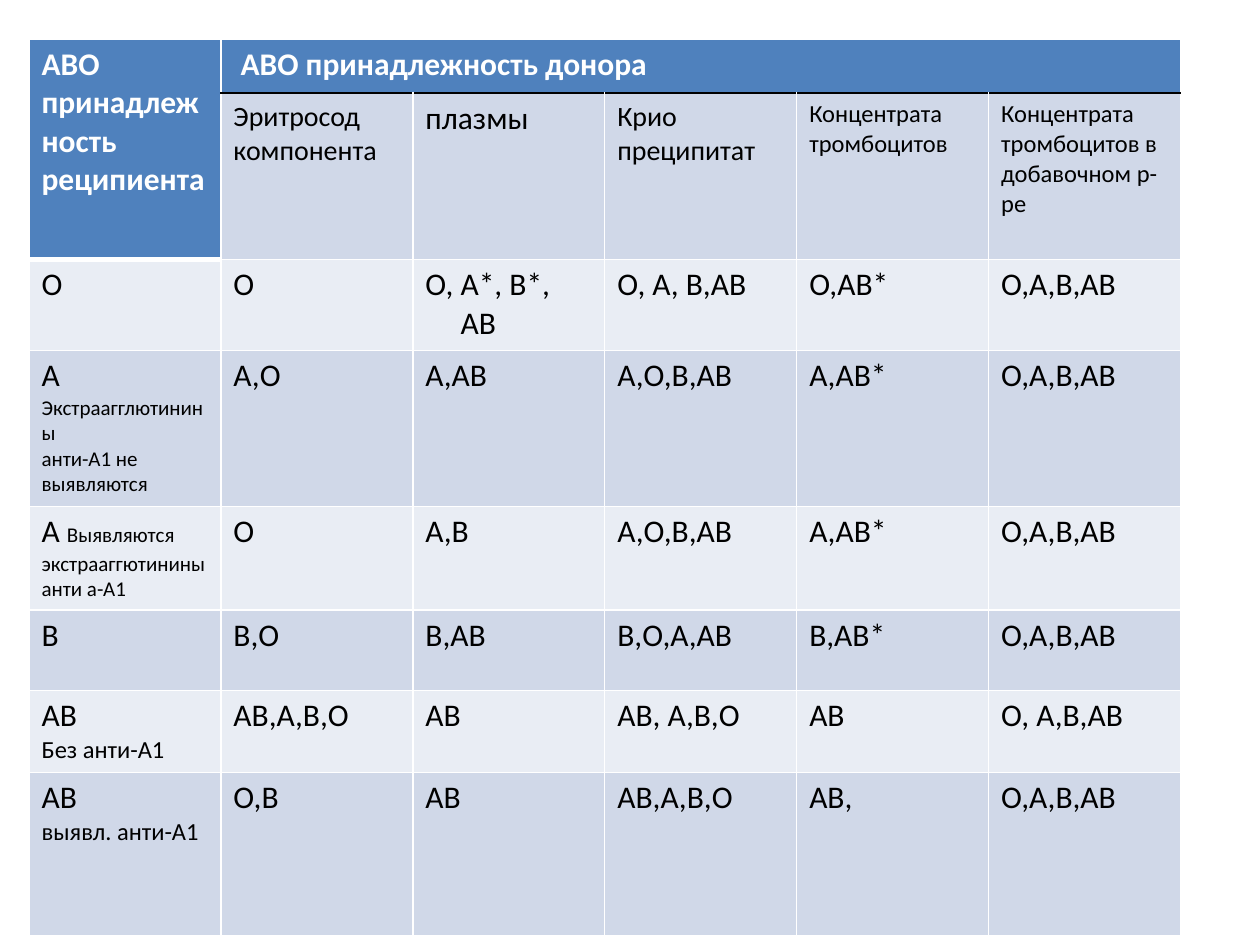
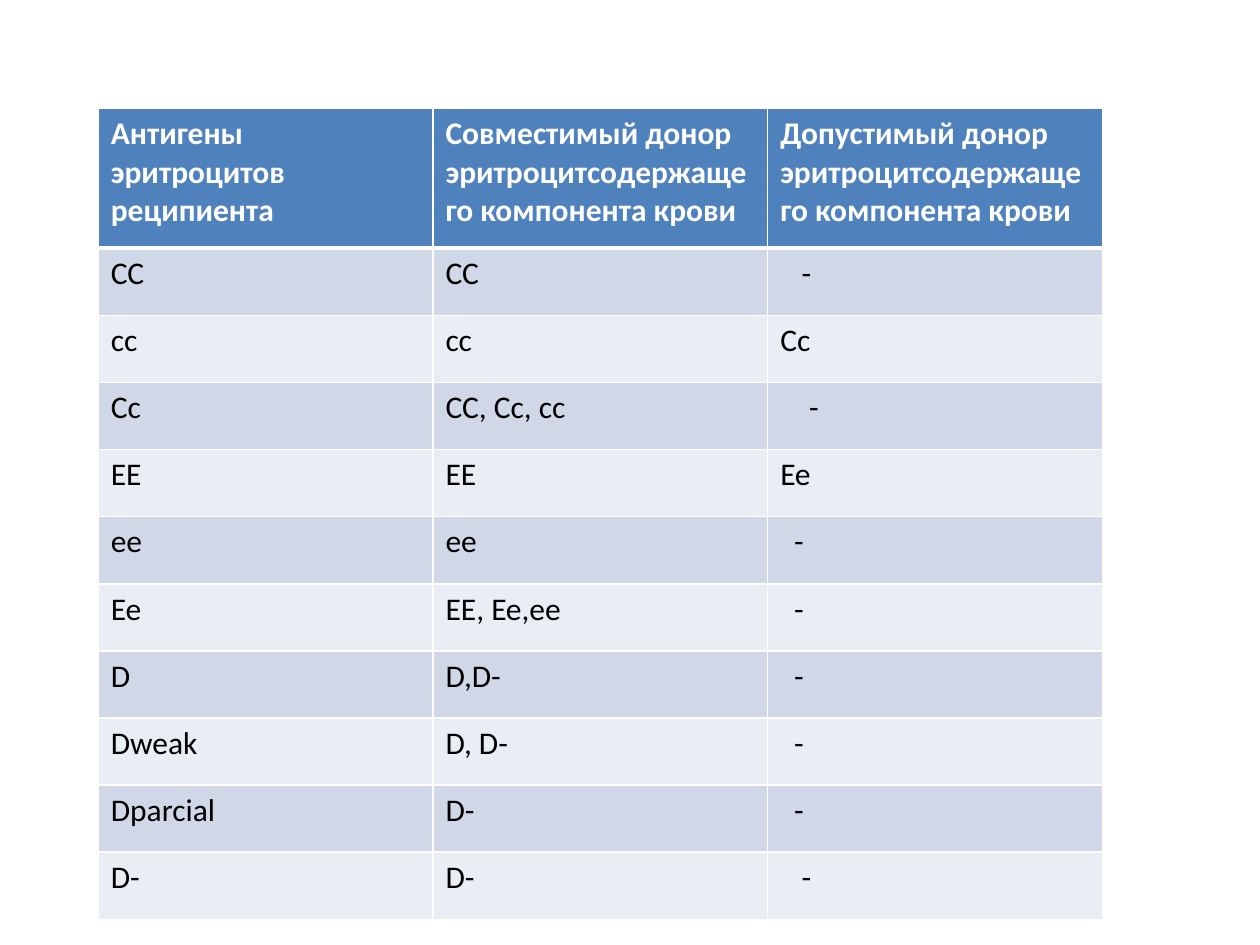
import pptx
import pptx.dml.color
import pptx.oxml
import pptx.oxml.ns
import pptx.util
from dataclasses import dataclass
from typing import NamedTuple, Union


@dataclass(frozen=True)
class Theme:
    font: str = "Calibri"
    header: str = "4F81BD"
    band_dark: str = "D0D8E8"
    band_light: str = "E9EDF4"
    text: str = "000000"
    inverse: str = "FFFFFF"
    body: int = 18
    subhead: int = 16
    note: int = 14
    small: int = 12
    thin: int = 1
    thick: int = 3


class Run(NamedTuple):
    text: str
    size: int


class Para(NamedTuple):
    runs: tuple[Run, ...]
    indent: float = 0  # inches


Cell = Union[str, tuple[Para, ...]]


@dataclass(frozen=True)
class TableSpec:
    """Place and row heights are in grid units."""
    left: float
    top: float
    width: float
    heights: tuple[float, ...]
    rows: tuple[tuple[Cell, ...], ...]
    header_rows: int
    bands: tuple[str, str]


THEME = Theme()
SLIDE_W, SLIDE_H = pptx.util.Inches(10), pptx.util.Inches(7.5)
GRID_COLUMNS = 100
UNIT = SLIDE_W / GRID_COLUMNS


def units(n: float) -> int:
    return round(n * UNIT)


def sized(text: str, size: int) -> Para:
    return Para((Run(text, size),))


def indented(text: str, indent: float) -> tuple[Para, ...]:
    return (Para((Run(text, THEME.body),), indent),)


def group(name: str, *notes: str, size: int) -> tuple[Para, ...]:
    """Blood group with smaller notes on the lines below it."""
    return (sized(name, THEME.body), *(sized(n, size) for n in notes))


def write(tf, content: Cell, *, color: str, bold: bool = False) -> None:
    paras = (sized(content, THEME.body),) if isinstance(content, str) else content
    for i, para in enumerate(paras):
        p = tf.paragraphs[0] if i == 0 else tf.add_paragraph()
        if para.indent:
            p._p.get_or_add_pPr().set("marL", str(pptx.util.Inches(para.indent)))
        for run in para.runs:
            r = p.add_run()
            r.text = run.text
            r.font.name = THEME.font
            r.font.size = pptx.util.Pt(run.size)
            r.font.bold = bold
            r.font.color.rgb = pptx.dml.color.RGBColor.from_string(color)


def set_borders(cell, **special: tuple[str, int]) -> None:
    """Draw thin white borders, except the sides (L, R, T, B) given."""
    tc_pr = cell._tc.get_or_add_tcPr()
    for i, side in enumerate("LRTB"):
        color, width = special.get(side, (THEME.inverse, THEME.thin))
        tc_pr.insert(i, pptx.oxml.parse_xml(
            f'<a:ln{side} {pptx.oxml.ns.nsdecls("a")} w="{pptx.util.Pt(width)}">'
            f'<a:solidFill><a:srgbClr val="{color}"/></a:solidFill></a:ln{side}>'))


def paint(cell, color: str) -> None:
    cell.fill.solid()
    cell.fill.fore_color.rgb = pptx.dml.color.RGBColor.from_string(color)


def add_table(s, spec: TableSpec):
    n_rows, n_cols = len(spec.rows), len(spec.rows[0])
    table = s.shapes.add_table(
        n_rows, n_cols, units(spec.left), units(spec.top),
        units(spec.width), units(sum(spec.heights))).table
    table.first_row = table.horz_banding = False
    for column in table.columns:
        column.width = units(spec.width / n_cols)
    for i, (height, contents) in enumerate(zip(spec.heights, spec.rows)):
        table.rows[i].height = units(height)
        is_header = i < spec.header_rows
        for cell, content in zip(table.rows[i].cells, contents):
            paint(cell, THEME.header if is_header else spec.bands[i % 2])
            if content:
                write(cell.text_frame, content, bold=is_header,
                      color=THEME.inverse if is_header else THEME.text)
    return table


def style_borders(table, special: dict[tuple[int, int], dict]) -> None:
    for i, row in enumerate(table.rows):
        for j, cell in enumerate(row.cells):
            set_borders(cell, **special.get((i, j), {}))


ANY_DONOR = "О,А,В,АВ"
ABO = TableSpec(
    left=2.3, top=3.1, width=91.4,
    heights=(4.3, 12.2, 7.2, 12.4, 8.2, 6.4, 6.5, 13),
    header_rows=1, bands=(THEME.band_light, THEME.band_dark),
    rows=(
        ("АВО принадлежность реципиента", " АВО принадлежность донора", "", "", "", ""),
        ("",
         (sized("Эритросод компонента", THEME.subhead),),
         "плазмы",
         (sized("Крио преципитат", THEME.subhead),),
         (sized("Концентрата тромбоцитов", THEME.note),),
         (sized("Концентрата тромбоцитов в добавочном р-ре", THEME.note),)),
        ("О", "О", (sized("О, А*, В*,", THEME.body), *indented("АВ", 0.28)),
         "О, А, В,АВ", "О,АВ*", ANY_DONOR),
        (group("А", "Экстраагглютинины", "анти-А1 не", "выявляются", size=THEME.small),
         "А,О", "А,АВ", "А,О,В,АВ", "А,АВ*", ANY_DONOR),
        ((Para((Run("А ", THEME.body),
                Run("Выявляются экстрааггютинины анти а-А1", THEME.small))),),
         "О", "А,В", "А,О,В,АВ", "А,АВ*", ANY_DONOR),
        ("В", "В,О", "В,АВ", "В,О,А,АВ", "В,АВ*", ANY_DONOR),
        (group("АВ", "Без анти-А1", size=THEME.note),
         "АВ,А,В,О", "АВ", "АВ, А,В,О", "АВ", "О, А,В,АВ"),
        (group("АВ", "выявл. анти-А1", size=THEME.note),
         "О,В", "АВ", "АВ,А,В,О", "АВ,", ANY_DONOR),
    ))

DASH_NEAR, DASH_MID, DASH_FAR = (indented("-", x) for x in (0.11, 0.17, 0.23))
ANTIGENS = TableSpec(
    left=7.8, top=8.6, width=79.7,
    heights=(11.1,) + (5.33,) * 10,
    header_rows=1, bands=(THEME.band_light, THEME.band_dark),
    rows=(
        ("Антигены эритроцитов реципиента",
         "Совместимый донор эритроцитсодержащего компонента крови",
         "Допустимый донор эритроцитсодержащего компонента крови"),
        ("СС", "СС", DASH_MID),
        ("сс", "сс", "Сс"),
        ("Сс", "СС, Сс, сс", DASH_FAR),
        ("ЕЕ", "ЕЕ", "Ее"),
        ("ее", "ее", DASH_NEAR),
        ("Ее", "ЕЕ, Ее,ее", DASH_NEAR),
        ("D", "D,D-", DASH_NEAR),
        ("Dweak", "D, D-", DASH_NEAR),
        ("Dparcial", "D-", DASH_NEAR),
        ("D-", "D-", DASH_MID),
    ))


def add_abo_slide(s) -> None:
    table = add_table(s, ABO)
    paint(table.cell(1, 0), THEME.header)
    heavy = {"B": (THEME.inverse, THEME.thick)}
    rule = (THEME.text, THEME.thin)
    special = {(0, 0): heavy, (1, 0): heavy}
    for j in range(1, len(ABO.rows[0])):
        special[0, j] = {"B": rule}
        special[1, j] = {"T": rule}
    style_borders(table, special)
    table.cell(0, 0).merge(table.cell(1, 0))
    table.cell(0, 1).merge(table.cell(0, len(ABO.rows[0]) - 1))


def add_antigen_slide(s) -> None:
    table = add_table(s, ANTIGENS)
    heavy = {"B": (THEME.inverse, THEME.thick)}
    style_borders(table, {(0, j): heavy for j in range(len(ANTIGENS.rows[0]))})


def main() -> None:
    prs = pptx.Presentation()
    prs.slide_width, prs.slide_height = SLIDE_W, SLIDE_H
    blank = prs.slide_layouts.get_by_name("Blank")
    for fill_slide in (add_abo_slide, add_antigen_slide):
        fill_slide(prs.slides.add_slide(blank))
    prs.save("out.pptx")


if __name__ == "__main__":
    main()
